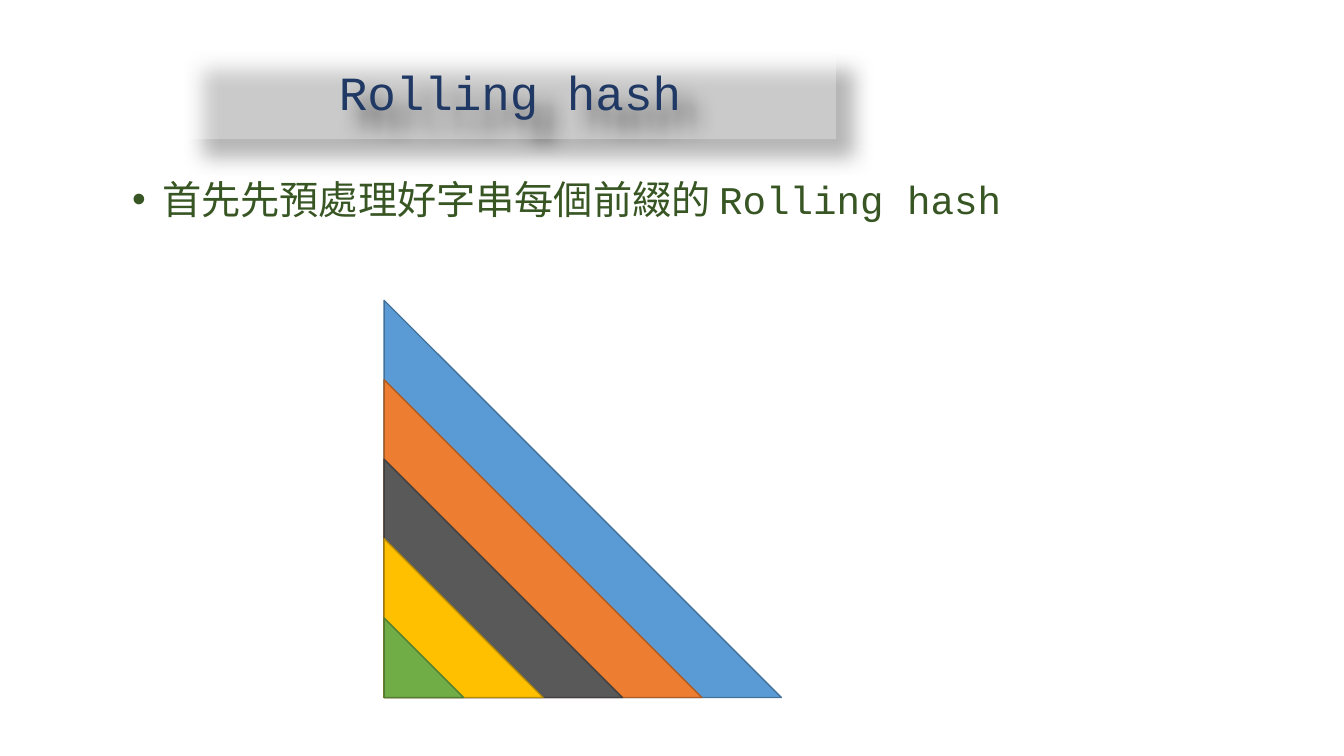
from dataclasses import dataclass

from lxml.etree import SubElement
from pptx import Presentation
from pptx.dml.color import RGBColor
from pptx.enum.shapes import MSO_SHAPE as Shape
from pptx.enum.text import MSO_ANCHOR as Anchor, MSO_AUTO_SIZE as AutoSize, PP_ALIGN as Align
from pptx.oxml.ns import qn
from pptx.util import Inches, Pt

TITLE = "Rolling hash"
POINT = "首先先預處理好字串每個前綴的 Rolling hash"
# Prefix triangles, largest first: fill, outline
PREFIXES = [
    ("5B9BD5", "42719B"),
    ("ED7D31", "AC5B23"),
    ("595959", "404040"),
    ("FFC000", "BA8C00"),
    ("70AD47", "517E33"),
]

WIDTH, HEIGHT = 13.33, 7.5
TITLE_AREA = (1.83, 0.51, 6.46, 0.87)
BODY_AREA = (1.21, 1.74, 11.5, 5.06)
CORNER_LEFT, CORNER_BOTTOM = 3.81, 6.92
STEP = 3.94 / len(PREFIXES)


@dataclass(frozen=True)
class Theme:
    font: str = "Courier New"
    title_color: str = "1F3864"
    body_color: str = "385623"
    title_fill: str = "FFFFFF"
    shadow: str = "000000"
    opacity: int = 29
    title_size: int = 34
    body_size: int = 28


THEME = Theme()


def place(shape, area):
    shape.left, shape.top, shape.width, shape.height = map(Inches, area)


def write(shape, text, size, color, anchor, align):
    frame = shape.text_frame
    frame.text = text
    frame.word_wrap = True
    frame.auto_size = AutoSize.NONE
    frame.vertical_anchor = anchor
    para = frame.paragraphs[0]
    para.alignment = align
    para.line_spacing = 0.9
    para.space_before = Pt(0)
    para.font.name = THEME.font
    para.font.size = Pt(size)
    para.font.color.rgb = RGBColor.from_string(color)
    return para


def add_color(parent, color, opacity):
    node = SubElement(parent, qn("a:srgbClr"), val=color)
    SubElement(node, qn("a:alpha"), val=str(opacity * 1000))


def add_title(page):
    title = page.shapes.title
    place(title, TITLE_AREA)
    write(title, TITLE, THEME.title_size, THEME.title_color, Anchor.MIDDLE, Align.CENTER)
    properties = title._element.spPr
    add_color(SubElement(properties, qn("a:solidFill")), THEME.title_fill, THEME.opacity)
    effects = SubElement(properties, qn("a:effectLst"))
    shadow = SubElement(effects, qn("a:outerShdw"), blurRad=str(Pt(15)), dist=str(Pt(18)),
                        dir=str(45 * 60000), algn="tl", rotWithShape="0")
    add_color(shadow, THEME.shadow, THEME.opacity)


def add_point(page):
    body = page.placeholders[1]
    place(body, BODY_AREA)
    para = write(body, POINT, THEME.body_size, THEME.body_color, Anchor.TOP, Align.LEFT)
    settings = para._p.get_or_add_pPr()
    settings.set("marL", str(Inches(0.3)))
    settings.set("indent", str(-Inches(0.3)))
    bullet_font = SubElement(settings, qn("a:buFont"), typeface="Arial")
    bullet = SubElement(settings, qn("a:buChar"), char="•")
    # The schema wants bullet elements ahead of the run defaults
    defaults = settings.find(qn("a:defRPr"))
    defaults.addprevious(bullet_font)
    defaults.addprevious(bullet)


def add_prefixes(page):
    for index, (fill, outline) in enumerate(PREFIXES):
        side = STEP * (len(PREFIXES) - index)
        area = (CORNER_LEFT, CORNER_BOTTOM - side, side, side)
        triangle = page.shapes.add_shape(Shape.RIGHT_TRIANGLE, *map(Inches, area))
        triangle.shadow.inherit = False
        triangle.fill.solid()
        triangle.fill.fore_color.rgb = RGBColor.from_string(fill)
        triangle.line.color.rgb = RGBColor.from_string(outline)
        triangle.line.width = Pt(1)


def main():
    deck = Presentation()
    deck.slide_width, deck.slide_height = Inches(WIDTH), Inches(HEIGHT)
    page = deck.slides.add_slide(deck.slide_layouts.get_by_name("Title and Content"))
    add_title(page)
    add_point(page)
    add_prefixes(page)
    deck.save("out.pptx")


if __name__ == "__main__":
    main()
